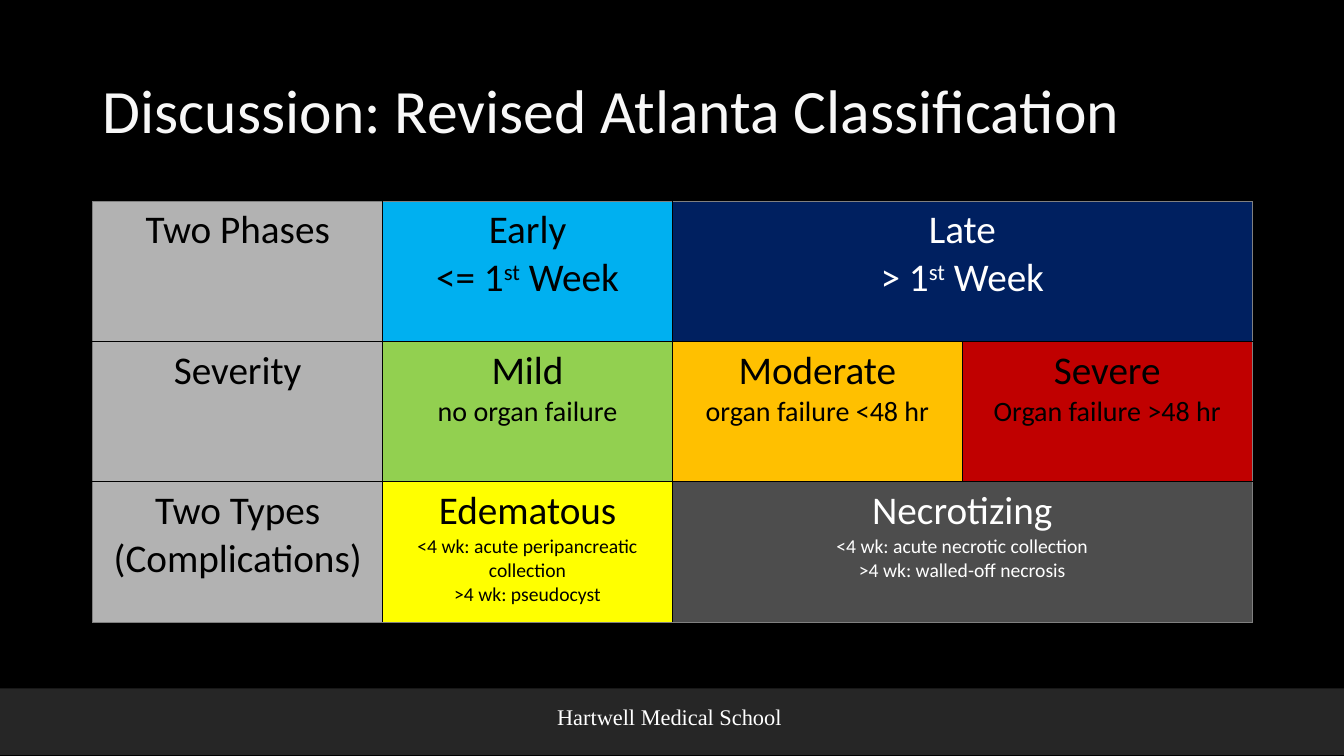
from dataclasses import dataclass

from lxml import etree
from pptx import Presentation
from pptx.dml.color import RGBColor
from pptx.enum.shapes import MSO_SHAPE
from pptx.enum.text import MSO_ANCHOR, PP_ALIGN
from pptx.oxml.ns import qn
from pptx.util import Inches, Pt

RECT = MSO_SHAPE.RECTANGLE
MIDDLE = MSO_ANCHOR.MIDDLE
LEFT, CENTER = PP_ALIGN.LEFT, PP_ALIGN.CENTER

BLACK = RGBColor(0x00, 0x00, 0x00)
WHITE = RGBColor(0xFF, 0xFF, 0xFF)
TITLE_WHITE = RGBColor(0xF8, 0xF8, 0xF8)
FOOTER_GRAY = RGBColor(0x26, 0x26, 0x26)
EDGE_GRAY = RGBColor(0x80, 0x80, 0x80)
LABEL_GRAY = RGBColor(0xB2, 0xB2, 0xB2)
BLUE = RGBColor(0x00, 0xB0, 0xF0)
NAVY = RGBColor(0x00, 0x20, 0x60)
GREEN = RGBColor(0x92, 0xD0, 0x50)
AMBER = RGBColor(0xFF, 0xC0, 0x00)
RED = RGBColor(0xC0, 0x00, 0x00)
YELLOW = RGBColor(0xFF, 0xFF, 0x00)
CHARCOAL = RGBColor(0x4D, 0x4D, 0x4D)

ROWS, COLS = 3, 4
HEAD, DETAIL, NOTE = 28, 20, 14


@dataclass
class Run:
    text: str
    size: int = HEAD
    superscript: bool = False


@dataclass
class Entry:
    row: int
    col: int
    fill: RGBColor
    paragraphs: list[list[Run]]
    color: RGBColor = BLACK
    span: int = 1


def week(phase: str, sign: str) -> list[list[Run]]:
    return [[Run(f"{phase}\n{sign} 1"), Run("st", superscript=True), Run(" Week")]]


ENTRIES = [
    Entry(0, 0, LABEL_GRAY, [[Run("Two Phases")]]),
    Entry(0, 1, BLUE, week("Early", "<=")),
    Entry(0, 2, NAVY, week("Late", ">"), WHITE, span=2),
    Entry(1, 0, LABEL_GRAY, [[Run("Severity")]]),
    Entry(1, 1, GREEN, [[Run("Mild\n"), Run("no organ failure", DETAIL)]]),
    Entry(1, 2, AMBER, [[Run("Moderate\n"), Run("organ failure <48 hr", DETAIL)]]),
    Entry(1, 3, RED, [[Run("Severe")], [Run("Organ failure >48 hr", DETAIL)]]),
    Entry(2, 0, LABEL_GRAY, [[Run("Two Types (Complications)")]]),
    Entry(2, 1, YELLOW, [
        [Run("Edematous\n"), Run("<4 wk: acute peripancreatic collection", NOTE)],
        [Run(">4 wk: pseudocyst", NOTE)],
    ]),
    Entry(2, 2, CHARCOAL, [
        [Run("Necrotizing")],
        [Run("<4 wk: acute necrotic collection\n>4 wk: walled-off necrosis", NOTE)],
    ], WHITE, span=2),
]


def add_text(p, text: str, *, size: int, color: RGBColor, font: str = "Calibri",
             align: PP_ALIGN = CENTER, superscript: bool = False) -> None:
    """Append text to a paragraph; each newline becomes a line break."""
    p.alignment = align
    for i, line in enumerate(text.split("\n")):
        if i:
            p.add_line_break()
        if not line:
            continue
        r = p.add_run()
        r.text = line
        r.font.name = font
        r.font.size = Pt(size)
        r.font.color.rgb = color
        if superscript:
            r.font._element.set("baseline", "30000")


def set_borders(cell, entry: Entry) -> None:
    """Thin gray on the table's outer edge, black between cells."""
    outer = {
        "L": entry.col == 0,
        "R": entry.col + entry.span == COLS,
        "T": entry.row == 0,
        "B": entry.row == ROWS - 1,
    }
    tc_pr = cell._tc.get_or_add_tcPr()
    for side, is_outer in outer.items():
        width, color = (Pt(0.5), EDGE_GRAY) if is_outer else (Pt(1), BLACK)
        ln = etree.SubElement(tc_pr, qn(f"a:ln{side}"), w=str(width))
        solid = etree.SubElement(ln, qn("a:solidFill"))
        etree.SubElement(solid, qn("a:srgbClr"), val=str(color))


def fill_cell(table, entry: Entry) -> None:
    cell = table.cell(entry.row, entry.col)
    if entry.span > 1:
        cell.merge(table.cell(entry.row, entry.col + entry.span - 1))
    set_borders(cell, entry)
    cell.fill.solid()
    cell.fill.fore_color.rgb = entry.fill
    tf = cell.text_frame
    for i, runs in enumerate(entry.paragraphs):
        p = tf.add_paragraph() if i else tf.paragraphs[0]
        for run in runs:
            add_text(p, run.text, size=run.size, color=entry.color,
                     superscript=run.superscript)


def add_footer(slide) -> None:
    sp = slide.shapes.add_shape(RECT, 0, Inches(6.83), Inches(13.33), Inches(0.66))
    sp.shadow.inherit = False
    sp.fill.solid()
    sp.fill.fore_color.rgb = FOOTER_GRAY
    sp.line.fill.background()
    box = slide.shapes.add_textbox(Inches(4.62), Inches(6.93), Inches(4.04), Inches(0.37))
    tf = box.text_frame
    tf.word_wrap = True
    add_text(tf.paragraphs[0], "Hartwell Medical School", size=16, color=WHITE,
             font="Times New Roman")


def add_title(slide) -> None:
    title = slide.shapes.title
    title.left, title.top = Inches(0.92), Inches(0.4)
    title.width, title.height = Inches(11.5), Inches(1.45)
    tf = title.text_frame
    tf.vertical_anchor = MIDDLE
    p = tf.paragraphs[0]
    p.line_spacing = 0.9
    add_text(p, "Discussion: Revised Atlanta Classification", size=44,
             color=TITLE_WHITE, align=LEFT)


def add_classification(slide) -> None:
    table = slide.shapes.add_table(ROWS, COLS, Inches(0.92), Inches(2),
                                   Inches(11.5), Inches(4.17)).table
    table.first_row = False
    table.horz_banding = False
    for entry in ENTRIES:
        fill_cell(table, entry)


def main() -> None:
    prs = Presentation()
    prs.slide_width, prs.slide_height = Inches(13.33), Inches(7.5)
    slide = prs.slides.add_slide(prs.slide_layouts.get_by_name("Title Only"))
    slide.background.fill.solid()
    slide.background.fill.fore_color.rgb = BLACK

    # Footer band, title and table
    add_footer(slide)
    add_title(slide)
    add_classification(slide)
    prs.save("out.pptx")


if __name__ == "__main__":
    main()
